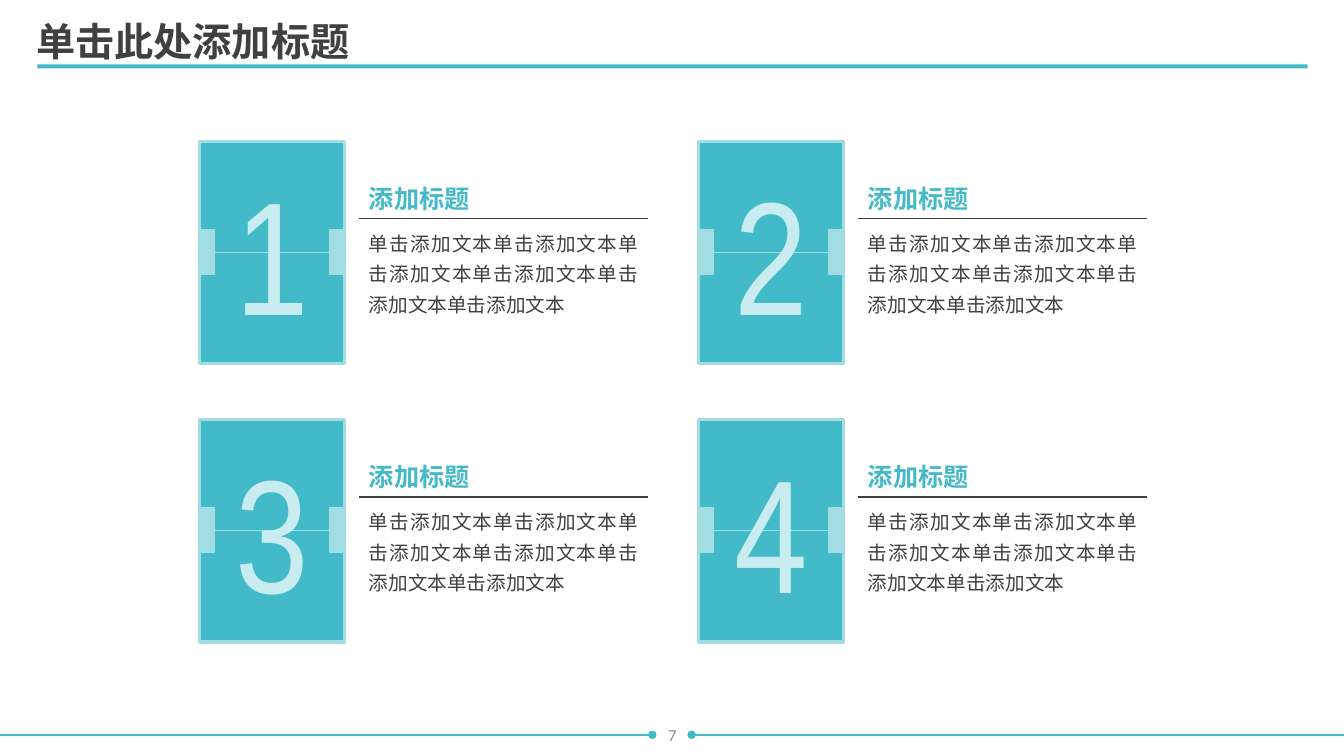
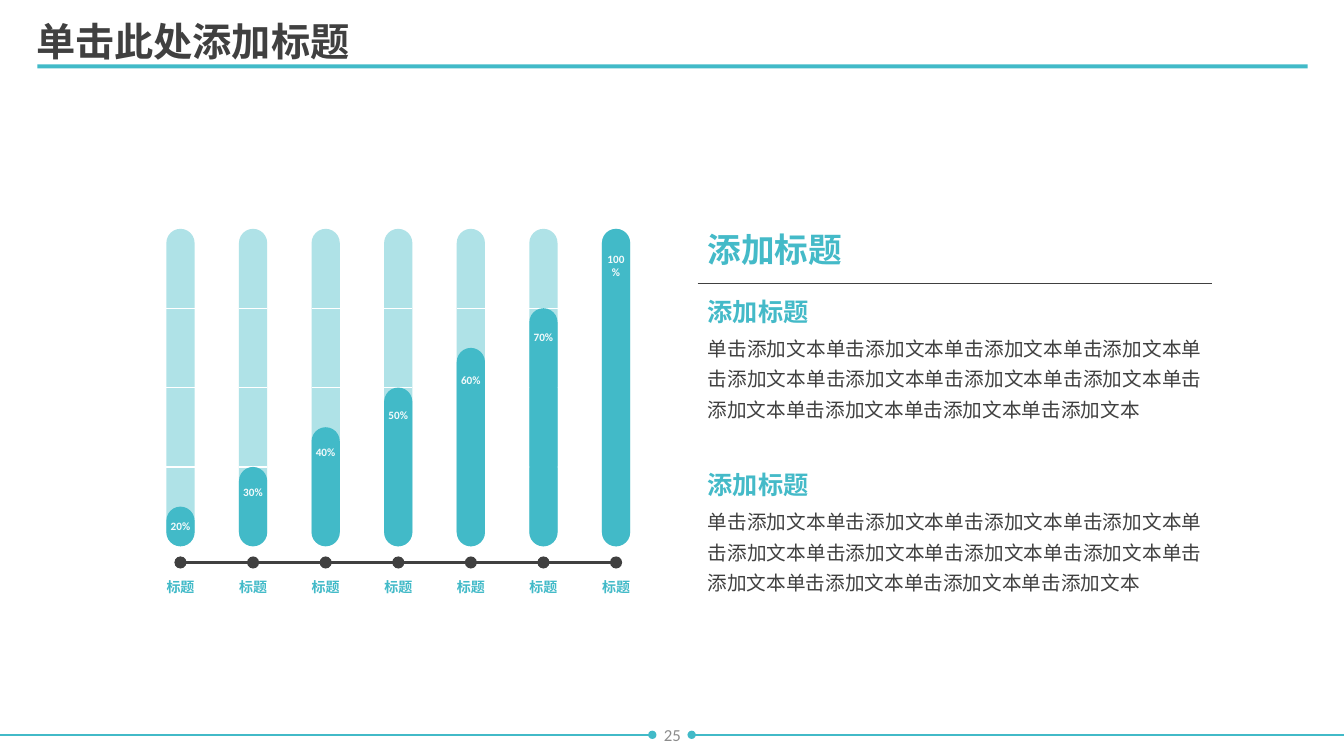
import pptx
import pptx.util
import pptx.dml.color
import pptx.enum.shapes
import pptx.enum.text
import pptx.oxml.ns
import lxml.etree

Inches = pptx.util.Inches
Pt = pptx.util.Pt
RGB = pptx.dml.color.RGBColor
Shape = pptx.enum.shapes.MSO_SHAPE
Align = pptx.enum.text.PP_ALIGN
Anchor = pptx.enum.text.MSO_ANCHOR
Fit = pptx.enum.text.MSO_AUTO_SIZE
qn = pptx.oxml.ns.qn

TEAL = RGB(0x42, 0xBA, 0xC8)
HEAD = RGB(0x44, 0xBA, 0xC8)
PALE = RGB(0xA1, 0xDD, 0xE3)
TRACK = RGB(0xAF, 0xE2, 0xE7)
DIGIT = RGB(0xC8, 0xEC, 0xF0)
DARK = RGB(0x40, 0x40, 0x40)
GREY = RGB(0x8C, 0x8C, 0x8C)
WHITE = RGB(0xFF, 0xFF, 0xFF)
SNOW = RGB(0xF3, 0xFA, 0xFB)

SANS = "Noto Sans CJK SC"
LATIN = "Calibri"
NARROW = "Arial Narrow"
WIDE, HIGH = 13.33, 7.5

TITLE = "单击此处添加标题"
PHRASE = "单击添加文本"
CARDS = [
    ("1", "添加标题", PHRASE * 6),
    ("2", "添加标题", PHRASE * 6),
    ("3", "添加标题", PHRASE * 6),
    ("4", "添加标题", PHRASE * 6),
]
# name, value label, height in eighths of the track, gap above the label
BARS = [
    ("标题", "20%", 1, 0.08),
    ("标题", "30%", 2, 0.13),
    ("标题", "40%", 3, 0.13),
    ("标题", "50%", 4, 0.16),
    ("标题", "60%", 5, 0.2),
    ("标题", "70%", 6, 0.17),
    ("标题", "100%", 8, 0.18),
]
TOPIC = "添加标题"
NOTES = [
    ("添加标题", PHRASE * 12),
    ("添加标题", PHRASE * 12),
]


def add_box(shapes, kind, x, y, w, h, fill, edge=None, weight=1):
    box = shapes.add_shape(kind, Inches(x), Inches(y), Inches(w), Inches(h))
    box.shadow.inherit = False
    box.fill.solid()
    box.fill.fore_color.rgb = fill
    if edge is None:
        box.line.fill.background()
    else:
        box.line.color.rgb = edge
        box.line.width = Pt(weight)
    return box


def add_pill(shapes, x, y, w, h, fill):
    add_box(shapes, Shape.ROUNDED_RECTANGLE, x, y, w, h, fill).adjustments[0] = 0.5


def add_line(shapes, x1, y1, x2, y2, color, weight=1, dot=False):
    """Draw a straight line, with a round end at its second point if dot is set."""
    line = shapes.add_connector(
        pptx.enum.shapes.MSO_CONNECTOR.STRAIGHT,
        Inches(x1), Inches(y1), Inches(x2), Inches(y2))
    line.line.color.rgb = color
    line.line.width = Pt(weight)
    if dot:
        lxml.etree.SubElement(line.line._get_or_add_ln(), qn("a:tailEnd"), type="oval")
    lxml.etree.SubElement(line._element.spPr, qn("a:effectLst"))


def add_text(shapes, x, y, w, h, text, size, color, font=SANS, bold=False,
             align=Align.LEFT, space=1.0, wrap=True, middle=False):
    box = shapes.add_textbox(Inches(x), Inches(y), Inches(w), Inches(h))
    frame = box.text_frame
    frame.word_wrap = wrap
    if middle:
        frame.vertical_anchor = Anchor.MIDDLE
    else:
        frame.auto_size = Fit.SHAPE_TO_FIT_TEXT
    para = frame.paragraphs[0]
    para.alignment = align
    para.line_spacing = space
    run = para.add_run()
    run.text = text
    run.font.size = Pt(size)
    run.font.bold = bold
    run.font.color.rgb = color
    run.font.name = font
    lxml.etree.SubElement(run._r.get_or_add_rPr(), qn("a:ea"), typeface=font)


def add_head(shapes, x, y, w, text, size=18):
    add_text(shapes, x, y, w, 0.37, text, size, HEAD, bold=True,
             align=Align.JUSTIFY, space=0.9)


def add_body(shapes, x, y, w, text):
    add_text(shapes, x, y, w, 1.01, text, 14, DARK, align=Align.JUSTIFY, space=1.3)


def add_slide(deck, number):
    """Add a slide with the shared title, rule and footer; return its shapes."""
    shapes = deck.slides.add_slide(deck.slide_layouts[6]).shapes
    add_box(shapes, Shape.RECTANGLE, 0.37, 0.64, 12.6, 0.04, TEAL)
    for start, end in ((0, 6.47), (WIDE, 6.86)):
        add_line(shapes, start, 7.29, end, 7.29, TEAL, dot=True)
    add_text(shapes, 0.26, 0.18, 7.56, 0.52, TITLE, 28, DARK, bold=True, space=0.9)
    add_text(shapes, 5.17, 7.09, 3, 0.4, number, 12, GREY, LATIN,
             align=Align.CENTER, middle=True)
    return shapes


def add_card(shapes, x, y, digit, head, body):
    w, h, tab = 1.44, 2.21, 0.15
    card = shapes.add_group_shape().shapes
    add_box(card, Shape.RECTANGLE, x, y, w, h, TEAL, PALE, 2.25)
    for left in (x, x + w - tab):
        add_box(card, Shape.RECTANGLE, left, y + 0.88, tab, 0.44, PALE, PALE)
    add_line(card, x + tab, y + 1.1, x + w - tab, y + 1.1, PALE, 0.5)
    add_text(card, x + w / 2 - 0.5, y + 0.08, 1, 2.02, digit, 115, DIGIT, NARROW,
             align=Align.CENTER, wrap=False)

    left = x + 1.58
    label = shapes.add_group_shape().shapes
    add_line(label, left, y + 0.77, left + 2.87, y + 0.77, DARK)
    add_head(label, left, y + 0.4, 2.39, head)
    add_body(label, left, y + 0.78, 2.87, body)


def add_cards(deck):
    shapes = add_slide(deck, "7")
    for i, card in enumerate(CARDS):
        row, col = divmod(i, 2)
        add_card(shapes, 1.98 + 4.95 * col, 1.4 + 2.76 * row, *card)


def add_bars(shapes):
    left, top, w, h, step = 1.65, 2.27, 0.28, 3.15, 0.72
    axis, dot = 5.58, 0.12
    first = left + w / 2
    add_line(shapes, first, axis, first + step * (len(BARS) - 1), axis, DARK, 1.5)
    for i, (name, value, part, gap) in enumerate(BARS):
        x = left + step * i
        mid = x + w / 2
        add_box(shapes, Shape.OVAL, mid - dot / 2, axis - dot / 2, dot, dot, DARK)
        track = shapes.add_group_shape().shapes
        add_pill(track, x, top, w, h, TRACK)
        for k in (1, 2, 3):
            y = top + h * k / 4
            add_line(track, x, y, x + w, y, WHITE)
        tall = h * part / 8
        y = top + h - tall
        add_pill(shapes, x, y, w, tall, TEAL)
        add_text(shapes, mid - 0.2, y + gap, 0.4, 0.23, value, 8, SNOW, LATIN,
                 bold=True, align=Align.CENTER, wrap=False)
        add_text(shapes, mid - 0.26, 5.69, 0.52, 0.27, name, 10, TEAL,
                 bold=True, align=Align.CENTER)


def add_chart(deck):
    shapes = add_slide(deck, "25")
    add_bars(shapes)
    left, w = 6.92, 5.1
    add_head(shapes, left, 2.27, w, TOPIC, 24)
    add_line(shapes, left, 2.81, left + w, 2.81, DARK)
    for i, (head, body) in enumerate(NOTES):
        y = 2.92 + 1.72 * i
        note = shapes.add_group_shape().shapes
        add_head(note, left, y, w, head)
        add_body(note, left, y + 0.3, w, body)


def main():
    deck = pptx.Presentation()
    deck.slide_width = Inches(WIDE)
    deck.slide_height = Inches(HIGH)
    add_cards(deck)
    add_chart(deck)
    deck.save("out.pptx")


if __name__ == "__main__":
    main()
